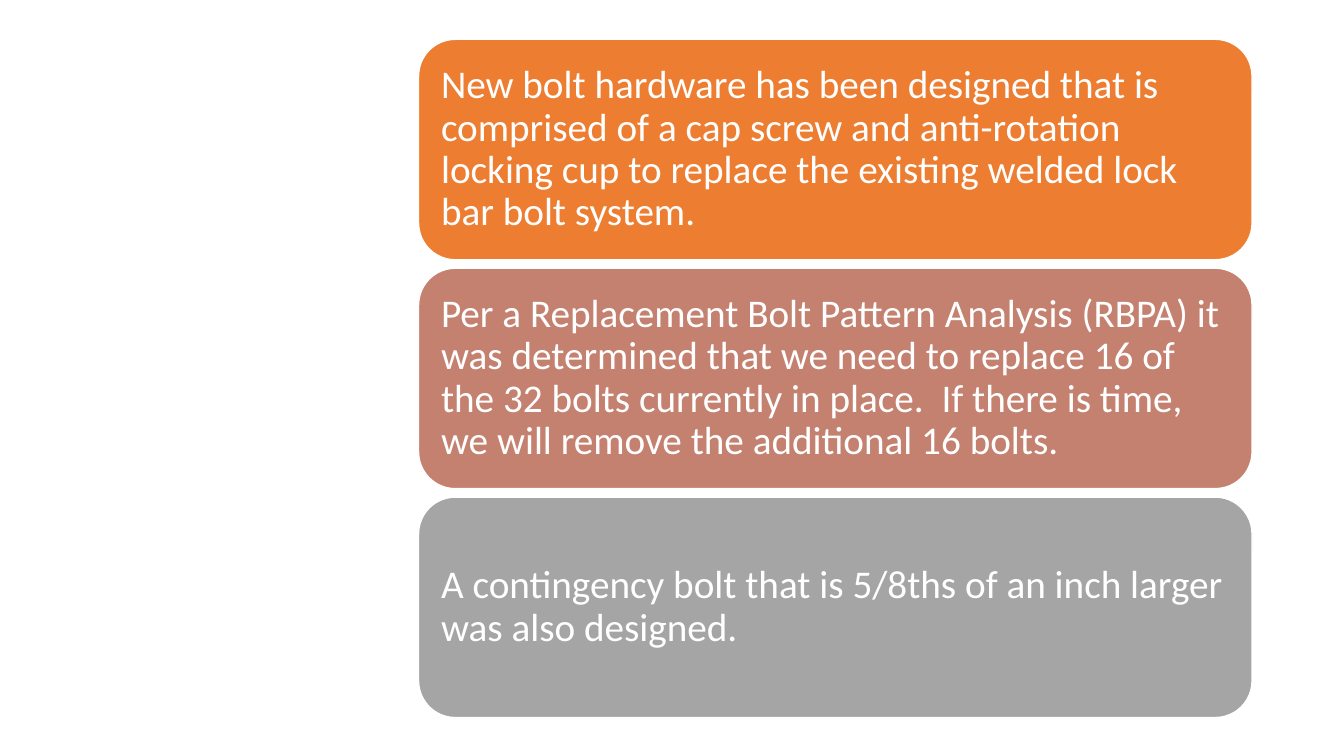
from dataclasses import dataclass

from pptx import Presentation
from pptx.dml.color import RGBColor
from pptx.enum.shapes import MSO_SHAPE
from pptx.enum.text import MSO_ANCHOR, PP_ALIGN
from pptx.util import Pt


@dataclass(frozen=True)
class Theme:
    font: str = "Calibri"
    body_size: float = 28
    white: str = "FFFFFF"
    orange: str = "ED7D31"
    clay: str = "C48170"
    gray: str = "A5A5A5"


class SlideBuilder:
    def __init__(self, slide, theme):
        self.slide = slide
        self.theme = theme

    def card(self, text, color, left, top, width, height):
        shape = self.slide.shapes.add_shape(
            MSO_SHAPE.ROUNDED_RECTANGLE, Pt(left), Pt(top), Pt(width), Pt(height)
        )
        shape.shadow.inherit = False
        shape.fill.solid()
        shape.fill.fore_color.rgb = RGBColor.from_string(color)
        shape.line.color.rgb = RGBColor.from_string(self.theme.white)
        shape.line.width = Pt(1)
        self.body_text(shape.text_frame, text)

    def body_text(self, text_frame, text, inset=8.4):
        text_frame.text = text
        text_frame.word_wrap = True
        text_frame.vertical_anchor = MSO_ANCHOR.MIDDLE
        text_frame.margin_left = text_frame.margin_right = Pt(inset)
        text_frame.margin_top = text_frame.margin_bottom = Pt(inset)
        for paragraph in text_frame.paragraphs:
            paragraph.alignment = PP_ALIGN.LEFT
            paragraph.line_spacing = 0.9
            paragraph.space_after = Pt(0.35 * self.theme.body_size)
            for run in paragraph.runs:
                run.font.name = self.theme.font
                run.font.size = Pt(self.theme.body_size)
                run.font.color.rgb = RGBColor.from_string(self.theme.white)


def main():
    presentation = Presentation()
    presentation.slide_width = Pt(960)
    presentation.slide_height = Pt(540)
    slide = presentation.slides.add_slide(presentation.slide_layouts[6])
    theme = Theme()
    builder = SlideBuilder(slide, theme)

    cards = [
        (
            "New bolt hardware has been designed that is comprised of a cap screw "
            "and anti-rotation locking cup to replace the existing welded lock bar "
            "bolt system.",
            theme.orange,
        ),
        (
            "Per a Replacement Bolt Pattern Analysis (RBPA) it was determined that "
            "we need to replace 16 of the 32 bolts currently in place.  If there is "
            "time, we will remove the additional 16 bolts.",
            theme.clay,
        ),
        (
            "A contingency bolt that is 5/8ths of an inch larger was also designed.",
            theme.gray,
        ),
    ]
    first_top, height, gap = 28.1, 157.5, 6
    for index, (text, color) in enumerate(cards):
        top = first_top + index * (height + gap)
        builder.card(text, color, 299, top, 595.4, height)

    presentation.save("out.pptx")


if __name__ == "__main__":
    main()
